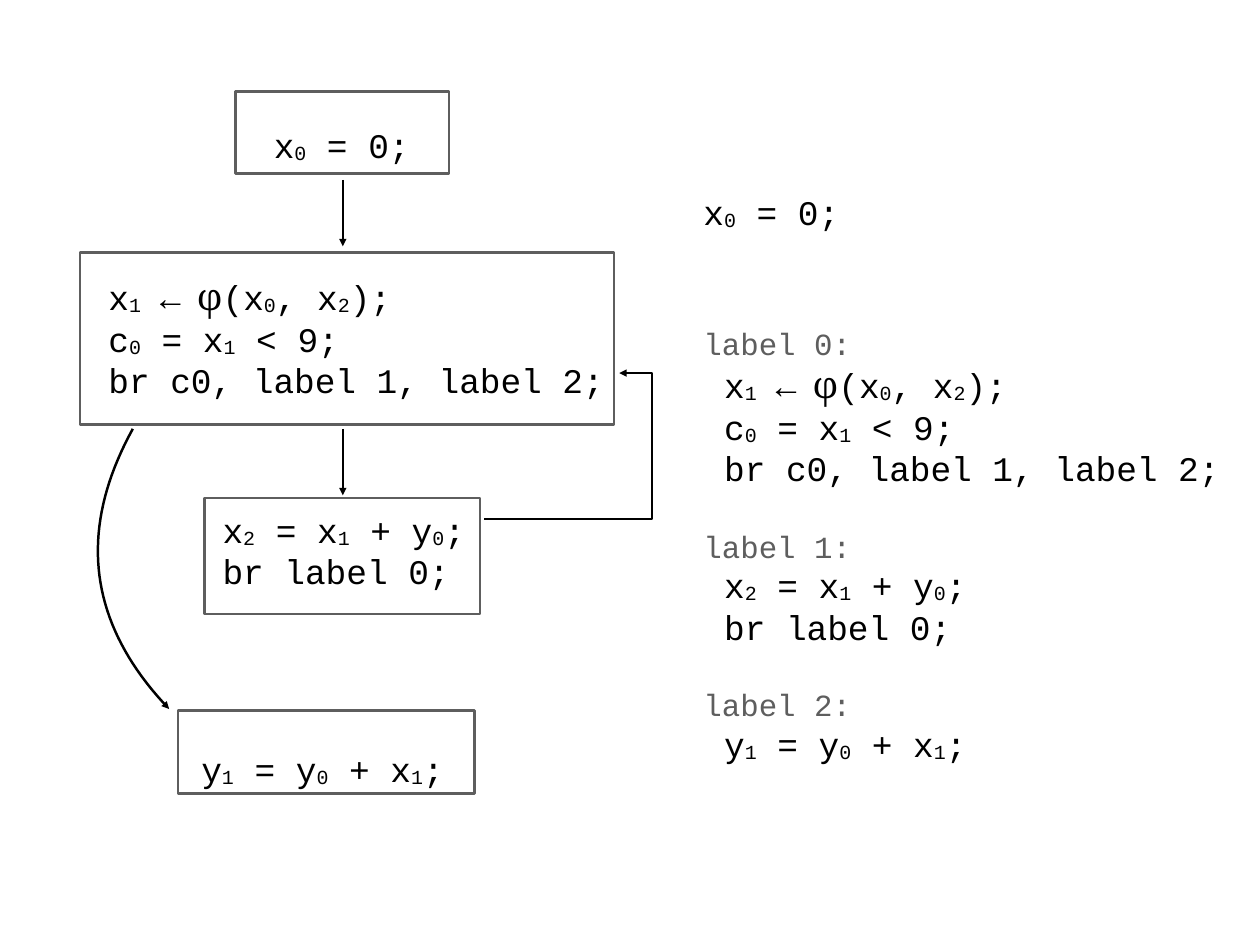
from lxml.etree import SubElement
from pptx import Presentation
from pptx.dml.color import RGBColor
from pptx.enum.shapes import MSO_CONNECTOR, MSO_SHAPE
from pptx.enum.text import MSO_ANCHOR
from pptx.oxml.ns import qn
from pptx.util import Pt

INK, GREY, WHITE = "000000", "5E5E5E", "FFFFFF"
FACES = {
    "code": {"name": "Courier New", "size": Pt(28)},
    "label": {"name": "Courier New", "size": Pt(25)},
    "←": {"name": "Arial", "size": Pt(28)},
    "φ": {"name": "Cambria", "size": Pt(30)},
}
INDENT = 16.8
INIT = ["x|_0| = 0;"]
TEST = ["x|_1 |← |φ|(x|_0|, x|_2|);", "c|_0| = x|_1| < 9;",
        "br c0, label 1, label 2;"]
STEP = ["x|_2| = x|_1| + y|_0|;", "br label 0;"]
DONE = ["y|_1| = y|_0| + x|_1|;"]


def tone(code):
    """Turn a hex string into a colour."""
    return RGBColor.from_string(code)


def put(obj, values):
    """Set each attribute named in a dict."""
    for name, value in values.items():
        setattr(obj, name, value)


def add_line(frame, text, face="code", color=INK, indent=INDENT, **format):
    """Add one line of code; bars part the runs and _ lowers a run."""
    fresh = len(frame.paragraphs) == 1 and not frame.paragraphs[0].runs
    para = frame.paragraphs[0] if fresh else frame.add_paragraph()
    props = para._p.get_or_add_pPr()
    props.set("marL", str(Pt(indent)))
    props.set("indent", "0")
    put(para, format)
    for part in text.split("|"):
        run = para.add_run()
        run.text = part.lstrip("_")
        put(run.font, FACES.get(part[0], FACES[face]))
        run.font.color.rgb = tone(color)
        if part.startswith("_"):
            run._r.get_or_add_rPr().set("baseline", "-6000")


def add_text(slide, box, anchor):
    """Add an empty text box and return its frame."""
    frame = slide.shapes.add_textbox(*map(Pt, box)).text_frame
    put(frame, {"word_wrap": True, "vertical_anchor": anchor,
                "margin_left": Pt(4.3), "margin_right": Pt(4.3),
                "margin_top": Pt(4.3), "margin_bottom": Pt(4.3)})
    return frame


def draw_node(slide, box, inner, lines, **format):
    """Draw a framed block with its code set at an offset in the box."""
    left, top = box[:2]
    rect = slide.shapes.add_shape(MSO_SHAPE.RECTANGLE, *map(Pt, box))
    rect.shadow.inherit = False
    rect.fill.solid()
    rect.fill.fore_color.rgb = tone(WHITE)
    rect.line.color.rgb = tone(GREY)
    rect.line.width = Pt(2)
    dx, dy, width, height = inner
    frame = add_text(slide, (left + dx, top + dy, width, height),
                     MSO_ANCHOR.MIDDLE)
    for line in lines:
        add_line(frame, line, **format)


def ink_arrow(shape, end):
    """Ink a line and put a triangle at the named end."""
    shape.line.color.rgb = tone(INK)
    shape.line.width = Pt(2)
    SubElement(shape.line._get_or_add_ln(), qn(end), type="triangle")


def draw_path(slide, points):
    """Draw an open path with an arrowhead on its first point."""
    first, *rest = [(Pt(x), Pt(y)) for x, y in points]
    pen = slide.shapes.build_freeform(*first)
    pen.add_line_segments(rest, close=False)
    shape = pen.convert_to_shape()
    shape.shadow.inherit = False
    shape.fill.background()
    ink_arrow(shape, "a:headEnd")


def draw_drop(slide, x, top, bottom):
    """Draw a straight arrow downwards."""
    line = slide.shapes.add_connector(
        MSO_CONNECTOR.STRAIGHT, Pt(x), Pt(top), Pt(x), Pt(bottom))
    SubElement(line._element.spPr, qn("a:effectLst"))
    effect = line._element.spPr[-1]
    ink_arrow(line, "a:tailEnd")
    line._element.spPr.append(effect)


def bend(a, b, c, d, steps=40):
    """List the points of a cubic curve."""
    marks = [i / steps for i in range(steps + 1)]
    return [tuple((1 - t) ** 3 * p + 3 * t * (1 - t) ** 2 * q
                  + 3 * t * t * (1 - t) * r + t ** 3 * s
                  for p, q, r, s in zip(a, b, c, d)) for t in marks]


def draw_flow(slide, box):
    """Draw the control flow graph from the corner of the box."""
    left, top = box[:2]
    nodes = [
        ((126.5, 0, 173.5, 67), (26.7, 13.7, 124, 39), INIT,
         {"indent": 0, "line_spacing": Pt(54)}),
        ((0, 131, 434, 139.7), (2, 15.1, 434, 107.3), TEST, {}),
        ((101.3, 330.4, 224, 94.3), (-6.5, 7.9, 244, 69.8), STEP, {}),
        ((79.7, 503.2, 241, 67.7), (-2.2, 12.2, 244, 69.8), DONE, {}),
    ]
    for (x, y, width, height), inner, lines, format in nodes:
        draw_node(slide, (left + x, top + y, width, height), inner, lines,
                  **format)
    for y in (72, 274.3):
        draw_drop(slide, left + 213.6, top + y, top + y + 54)
    back = [(438.3, 229), (464.9, 229), (464.9, 347.8), (328.1, 347.8)]
    leave = bend((72.5, 502), (7, 433.5), (-3.1, 358), (43, 274.3))
    for points in (back, leave):
        draw_path(slide, [(left + x, top + y) for x, y in points])


def draw_code(slide, box):
    """Write the labelled listing inside the box."""
    frame = add_text(slide, box, MSO_ANCHOR.TOP)
    add_line(frame, INIT[0], indent=0, line_spacing=Pt(54))
    heads = [{"space_before": Pt(54), "line_spacing": Pt(51)},
             {"space_before": Pt(31.7)}, {"space_before": Pt(31.7)}]
    for i, (head, lines) in enumerate(zip(heads, (TEST, STEP, DONE))):
        add_line(frame, f"label {i}:", "label", GREY, 0, **head)
        for line in lines:
            add_line(frame, line)


def main():
    """Build and save the slide."""
    deck = Presentation()
    put(deck, {"slide_width": Pt(1024), "slide_height": Pt(768)})
    slide = deck.slides.add_slide(deck.slide_layouts[6])
    draw_code(slide, (567.4, 130.3, 445.7, 470))
    draw_flow(slide, (65, 74.2, 465, 571))
    deck.save("out.pptx")


if __name__ == "__main__":
    main()
